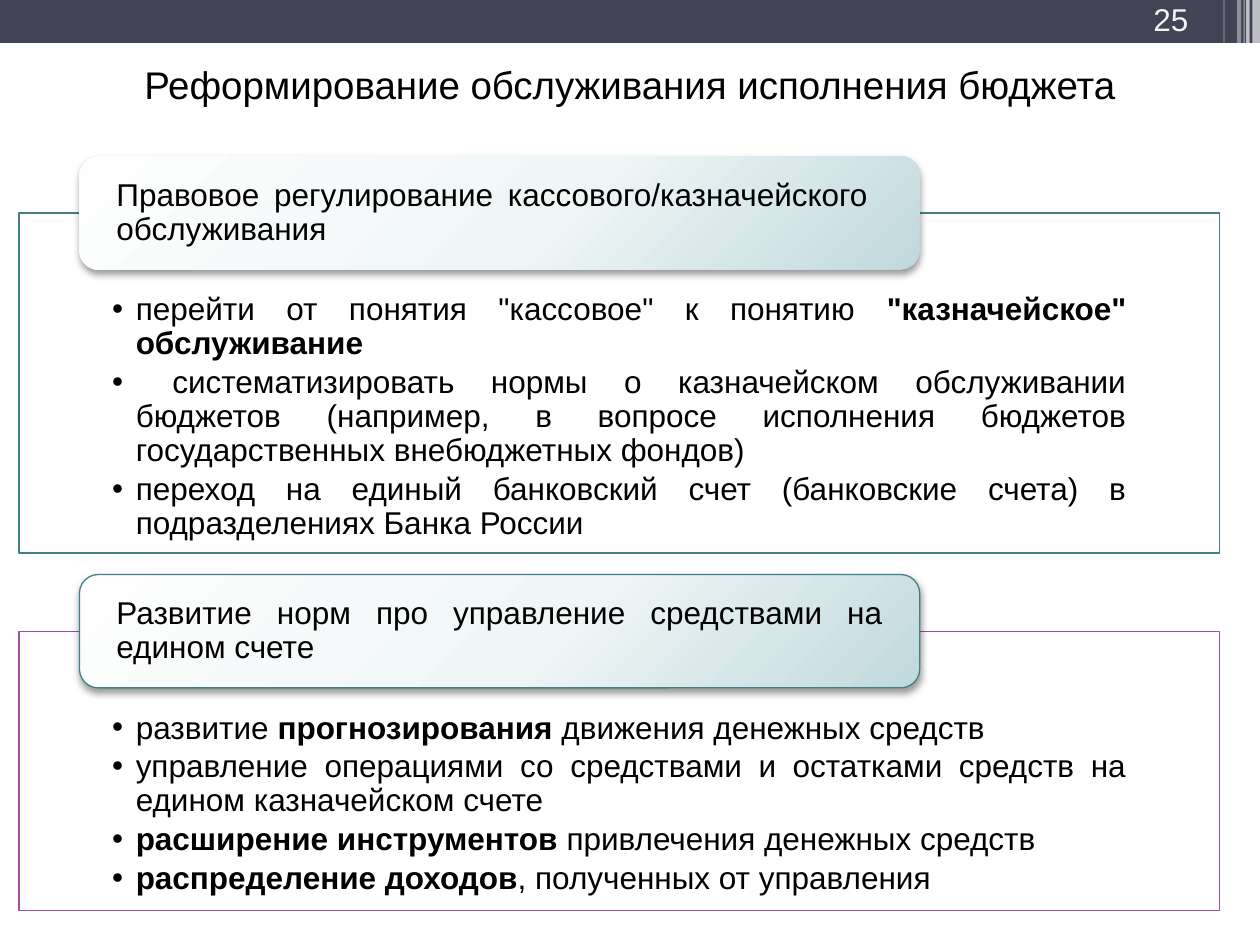
import pptx
import pptx.dml.color
import pptx.enum.shapes
import pptx.enum.text
import pptx.oxml
import pptx.oxml.ns
import pptx.util

Pt = pptx.util.Pt
ALIGN = pptx.enum.text.PP_ALIGN
ANCHOR = pptx.enum.text.MSO_ANCHOR
SHAPES = pptx.enum.shapes.MSO_SHAPE
A_NS = 'xmlns:a="http://schemas.openxmlformats.org/drawingml/2006/main"'

STRIPES = [(715.7, 4.3, 49, 65), (712.1, 2.1, 49, 65), (710.6, 0.7, 49, 60),
           (707, 2.2, 49, 40), (699.1, 0.7, 46, 30)]
HEADING_HEIGHT = 64.8
HEADING_STOPS = [(0, "FEFEFE"), (55, "F0F6F6"), (100, "BFD9DD")]
SECTIONS = [
    (121.7, 194.4, "438086", None,
     "Правовое регулирование кассового/казначейского  обслуживания",
     ['перейти от понятия "кассовое" к понятию *"казначейское" обслуживание *',
      " систематизировать нормы о казначейском обслуживании бюджетов (например, "
      "в вопросе исполнения бюджетов государственных внебюджетных фондов)",
      "переход на единый банковский счет (банковские счета) в подразделениях Банка России"]),
    (360.7, 159.8, "A04DA3", "438086",
     "Развитие норм про управление средствами на едином счете",
     ["развитие *прогнозирования* движения денежных средств",
      "управление операциями со средствами и остатками средств на едином казначейском счете ",
      "*расширение инструментов *привлечения денежных средств",
      "*распределение доходов*, полученных от управления"]),
]


def rgb(value):
    """Return the colour for a hex string."""
    return pptx.dml.color.RGBColor.from_string(value)


def place(shape, left, top, width, height):
    """Move and size a shape, in points."""
    shape.left, shape.top = Pt(left), Pt(top)
    shape.width, shape.height = Pt(width), Pt(height)


def paint(shape, colour, opacity=100):
    """Fill a shape with one colour at an opacity in percent."""
    shape.fill.solid()
    shape.fill.fore_color.rgb = rgb(colour)
    if opacity < 100:
        tint = shape._element.spPr.find(".//" + pptx.oxml.ns.qn("a:srgbClr"))
        tint.append(pptx.oxml.parse_xml(f'<a:alpha {A_NS} val="{opacity * 1000}"/>'))


def outline(shape, colour):
    """Give a shape a thin line, or none."""
    if colour is None:
        shape.line.fill.background()
    else:
        shape.line.color.rgb = rgb(colour)
        shape.line.width = Pt(0.75)


def set_frame(shape, insets, anchor):
    """Set wrapping, insets (left, top, right, bottom) and anchor."""
    frame = shape.text_frame
    frame.word_wrap = True
    frame.auto_size = pptx.enum.text.MSO_AUTO_SIZE.NONE
    frame.vertical_anchor = anchor
    (frame.margin_left, frame.margin_top,
     frame.margin_right, frame.margin_bottom) = map(Pt, insets)
    return frame


def style(paragraph, size, alignment, colour="000000"):
    """Set the font and alignment of a paragraph."""
    paragraph.font.name = "Arial"
    paragraph.font.size = Pt(size)
    paragraph.font.color.rgb = rgb(colour)
    paragraph.alignment = alignment


def add_bar(slide, left, width, height, colour, opacity=100):
    """Add a plain bar hanging from the top edge."""
    bar = slide.shapes.add_shape(SHAPES.RECTANGLE, Pt(left), 0, Pt(width), Pt(height))
    bar.shadow.inherit = False
    paint(bar, colour, opacity)
    outline(bar, None)


def add_page_number(slide, number):
    """Add the page number in the top bar."""
    box = slide.shapes.add_textbox(Pt(629.3), Pt(1.4), Pt(56.9), Pt(23.8))
    frame = set_frame(box, (7.2, 3.6, 7.2, 3.6), ANCHOR.BOTTOM)
    frame.text = number
    style(frame.paragraphs[0], 18, ALIGN.RIGHT, "F2F2F2")


def set_title(title, text):
    """Place and fill the slide title."""
    place(title, 36, 29.5, 648, 37.4)
    frame = set_frame(title, (7.2, 3.6, 7.2, 3.6), ANCHOR.MIDDLE)
    frame.text = text
    style(frame.paragraphs[0], 22, ALIGN.CENTER)


def add_bullet(paragraph, text):
    """Write a bulleted line in which asterisks enclose bold words."""
    style(paragraph, 18, ALIGN.JUSTIFY)
    paragraph.line_spacing = 0.9
    paragraph.space_before, paragraph.space_after = Pt(0), Pt(2.7)
    properties = paragraph._p.get_or_add_pPr()
    properties.set("marL", str(Pt(13.5)))
    properties.set("indent", str(Pt(-13.5)))
    bullet = pptx.oxml.parse_xml(f'<a:buChar {A_NS} char="•"/>')
    properties.find(pptx.oxml.ns.qn("a:defRPr")).addprevious(bullet)
    for index, part in enumerate(text.split("*")):
        if part:
            run = paragraph.add_run()
            run.text = part
            run.font.bold = index % 2 == 1


def set_list(body, top, height, colour, items):
    """Frame a body placeholder and fill it with bullets."""
    place(body, 10.8, top, 686.2, height)
    paint(body, "FFFFFF", 90)
    outline(body, colour)
    frame = set_frame(body, (53.3, 46.1, 53.3, 10.1), ANCHOR.TOP)
    for index, item in enumerate(items):
        add_bullet(frame.add_paragraph() if index else frame.paragraphs[0], item)


def add_heading(slide, top, colour, text):
    """Add a rounded, shaded section heading."""
    heading = slide.shapes.add_shape(SHAPES.ROUNDED_RECTANGLE, Pt(45.4), Pt(top),
                                     Pt(480.2), Pt(HEADING_HEIGHT))
    outline(heading, colour)
    heading.fill.background()
    stops = "".join(f'<a:gs pos="{position * 1000}"><a:srgbClr val="{tint}"/></a:gs>'
                    for position, tint in HEADING_STOPS)
    properties = heading._element.spPr
    properties.replace(properties.find(pptx.oxml.ns.qn("a:noFill")), pptx.oxml.parse_xml(
        f'<a:gradFill {A_NS} rotWithShape="1"><a:gsLst>{stops}</a:gsLst><a:path path="circle">'
        '<a:fillToRect l="-40000" t="-90000" r="140000" b="190000"/></a:path></a:gradFill>'))
    heading.shadow.inherit = False
    properties.find(pptx.oxml.ns.qn("a:effectLst")).append(pptx.oxml.parse_xml(
        f'<a:outerShdw {A_NS} blurRad="{Pt(4.1)}" dist="{Pt(2)}" dir="5400000" rotWithShape="0">'
        '<a:srgbClr val="000000"><a:alpha val="40000"/></a:srgbClr></a:outerShdw>'))
    frame = set_frame(heading, (18, 0, 18, 0), ANCHOR.MIDDLE)
    frame.text = text
    style(frame.paragraphs[0], 18, ALIGN.JUSTIFY)
    frame.paragraphs[0].line_spacing = 0.9
    frame.paragraphs[0].space_after = Pt(6.3)


def main():
    """Build and save the slide."""
    presentation = pptx.Presentation()
    presentation.slide_width, presentation.slide_height = Pt(720), Pt(540)
    slide = presentation.slides.add_slide(presentation.slide_layouts[3])
    add_bar(slide, 0, 720, 24.5, "424456")
    for left, width, height, opacity in STRIPES:
        add_bar(slide, left, width, height, "FFFFFF", opacity)
    set_title(slide.shapes.title, "Реформирование обслуживания исполнения бюджета")
    add_page_number(slide, "25")
    for index, (top, height, colour, edge, heading, items) in enumerate(SECTIONS, 1):
        set_list(slide.placeholders[index], top, height, colour, items)
        add_heading(slide, top - HEADING_HEIGHT / 2, edge, heading)
    presentation.save("out.pptx")


if __name__ == "__main__":
    main()
